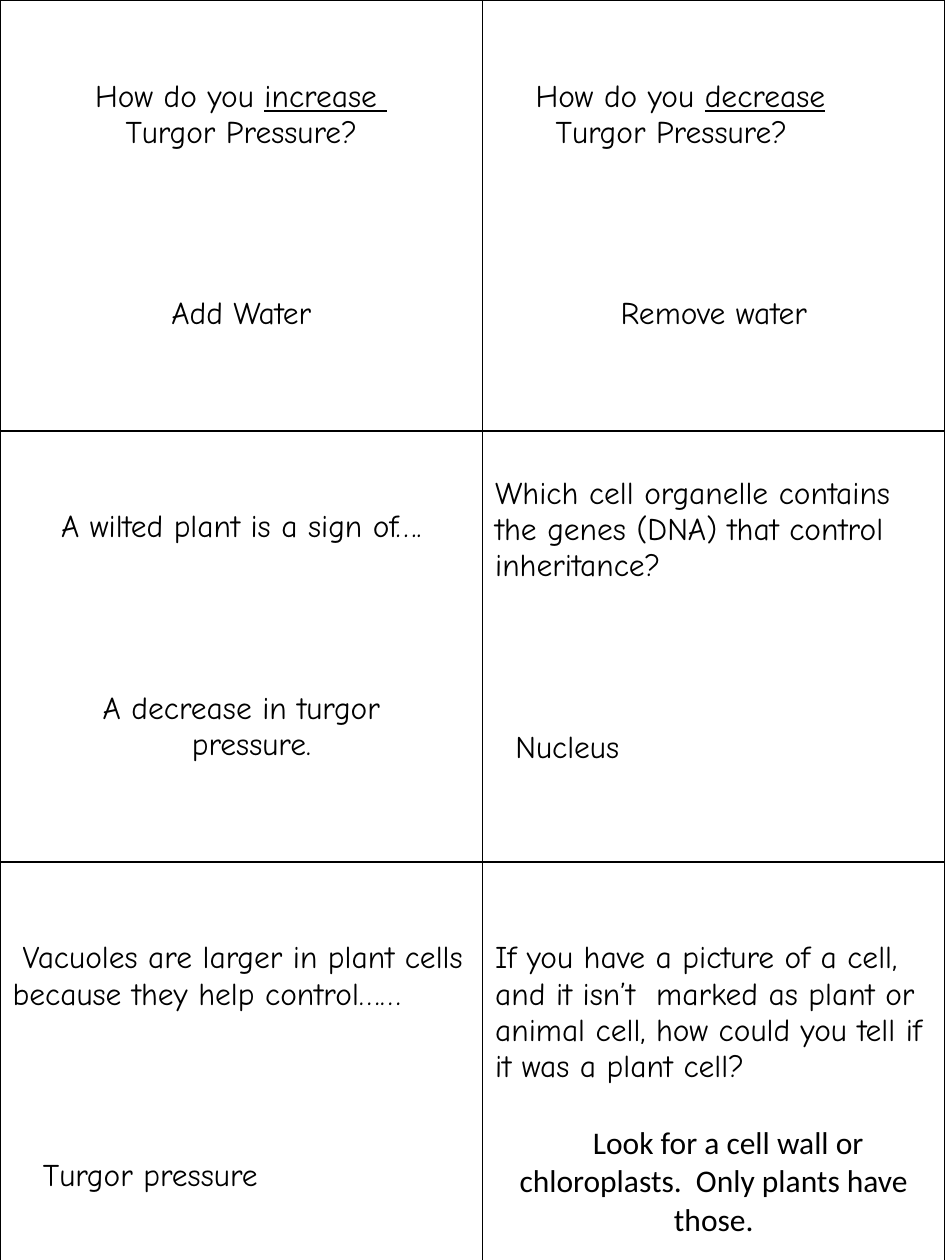
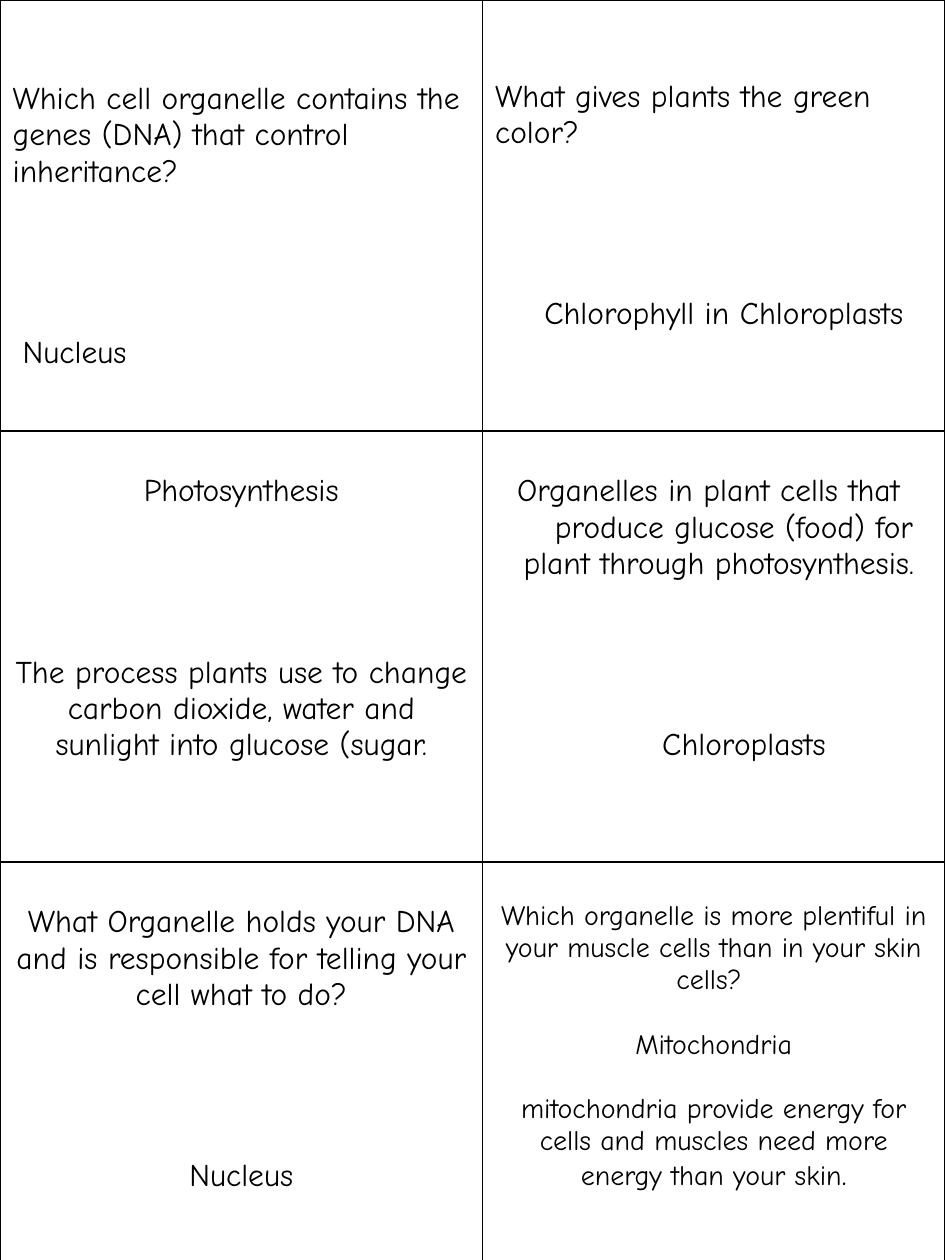
from dataclasses import dataclass
from lxml import etree
from pptx import Presentation
from pptx import util as u
from pptx.dml.color import RGBColor
from pptx.enum import text
from pptx.oxml import ns

FONT = "Comic Neue"
INK = "000000"
PAPER = "FFFFFF"
COLS = (3.83, 3.67)
ROWS = (3.42, 3.42, 3.39)
LINE = 20.7        # points taken by one line of 18 pt text
SPACE = 0.08       # inches, one step of indent
CENTER = text.PP_ALIGN.CENTER
LEFT = text.PP_ALIGN.LEFT


@dataclass
class Line:
    """One paragraph; text is a string or a list of (text, font settings)."""
    text: object
    align: int = CENTER
    indent: float = 0
    first: float = 0
    font: str = FONT


@dataclass
class Card:
    """Blocks of lines, with a gap in points above the first and between them."""
    blocks: list
    top: float = LINE
    gap: float = 4 * LINE
    size: float = 18


def left(content, indent=0, first=0):
    return Line(content, LEFT, indent, first)


def color(value):
    return RGBColor.from_string(value)


def dna_card(top, indent):
    question = "Which cell organelle contains the genes (DNA) that control inheritance?"
    return Card([[left(question)], [left("Nucleus", indent)]], top=top)


def slide_cards():
    underlined = {"underline": True}
    turgor = [
        [Card([[Line([("How do you ", {}), ("increase ", underlined)]),
                Line("Turgor Pressure?")],
               [Line("Add Water")]], top=2 * LINE),
         Card([[left([("How do you ", {}), ("decrease", underlined)], 4 * SPACE),
                left("Turgor Pressure?", 6 * SPACE)],
               [Line("Remove water")]], top=2 * LINE)],
        [Card([[Line("A wilted plant is a sign of….")],
               [Line("A decrease in turgor"),
                Line("pressure.", indent=2 * SPACE)]], top=2 * LINE),
         dna_card(22, 2 * SPACE)],
        [Card([[left("Vacuoles are larger in plant cells because they help control……",
                     first=SPACE)],
               [left("Turgor pressure", 3 * SPACE)]], top=2 * LINE),
         Card([[left("If you have a picture of a cell, and it isn’t  marked as plant or "
                     "animal cell, how could you tell if it was a plant cell?")],
               [Line("Look for a cell wall or chloroplasts.  Only plants have those.",
                     first=0.23, font="Calibri")]], top=2 * LINE, gap=22)],
    ]
    organelles = [
        [dna_card(22 + LINE, SPACE),
         Card([[left("What gives plants the green color?")],
               [Line("Chlorophyll in Chloroplasts", indent=2 * SPACE)]], top=2 * LINE)],
        [Card([[Line("Photosynthesis")],
               [Line("The process plants use to change carbon dioxide, water and "
                     "sunlight into glucose (sugar.")]]),
         Card([[Line("Organelles in plant cells that "),
                Line("produce glucose (food) for", indent=4 * SPACE),
                Line("plant through photosynthesis.", indent=SPACE)],
               [Line("Chloroplasts", indent=6 * SPACE)]])],
        [Card([[Line("What Organelle holds your DNA and is responsible for telling "
                     "your cell what to do?")],
               [Line("Nucleus")]]),
         Card([[Line("Which organelle is more plentiful in your muscle cells than in "
                     "your skin cells? ")],
               [Line("Mitochondria")],
               [Line([("mitochondria provide energy for cells and muscles need more "
                       "energy than your skin", {}), (".", {"size": u.Pt(18)})])]],
              top=18.4, gap=18.4, size=16)],
    ]
    return turgor, organelles


def write_line(p, line, size, gap):
    p.alignment = line.align
    p.space_before = u.Pt(gap)
    pPr = p._p.get_or_add_pPr()
    pPr.set("marL", str(u.Inches(line.indent)))
    pPr.set("indent", str(u.Inches(line.first)))
    pieces = [(line.text, {})] if isinstance(line.text, str) else line.text
    for content, settings in pieces:
        r = p.add_run()
        r.text = content
        r.font.name = line.font
        r.font.size = u.Pt(size)
        r.font.color.rgb = color(INK)
        for name, value in settings.items():
            setattr(r.font, name, value)


def border_cell(cell):
    tcPr = cell._tc.get_or_add_tcPr()
    for i, side in enumerate(("lnL", "lnR", "lnT", "lnB")):
        ln = etree.Element(ns.qn("a:" + side), w=str(u.Pt(1)))
        fill = etree.SubElement(ln, ns.qn("a:solidFill"))
        etree.SubElement(fill, ns.qn("a:srgbClr"), val=INK)
        tcPr.insert(i, ln)


def fill_card(cell, card):
    cell.fill.solid()
    cell.fill.fore_color.rgb = color(PAPER)
    border_cell(cell)
    cell.margin_top = u.Inches(0.05) + u.Pt(card.top)
    tf = cell.text_frame
    p = tf.paragraphs[0]
    for b, block in enumerate(card.blocks):
        for i, line in enumerate(block):
            if b or i:
                p = tf.add_paragraph()
            write_line(p, line, card.size, card.gap if b and not i else 0)


def add_card_sheet(prs, cards):
    s = prs.slides.add_slide(prs.slide_layouts[6])
    table = s.shapes.add_table(len(ROWS), len(COLS), 0, 0,
                               u.Inches(sum(COLS)), u.Inches(sum(ROWS))).table
    table.first_row = table.horz_banding = False
    for column, width in zip(table.columns, COLS):
        column.width = u.Inches(width)
    for row, height, row_cards in zip(table.rows, ROWS, cards):
        row.height = u.Inches(height)
        for cell, card in zip(row.cells, row_cards):
            fill_card(cell, card)


def main():
    prs = Presentation()
    prs.slide_width, prs.slide_height = u.Inches(7.5), u.Inches(10)
    for cards in slide_cards():
        add_card_sheet(prs, cards)
    prs.save("out.pptx")


if __name__ == "__main__":
    main()
